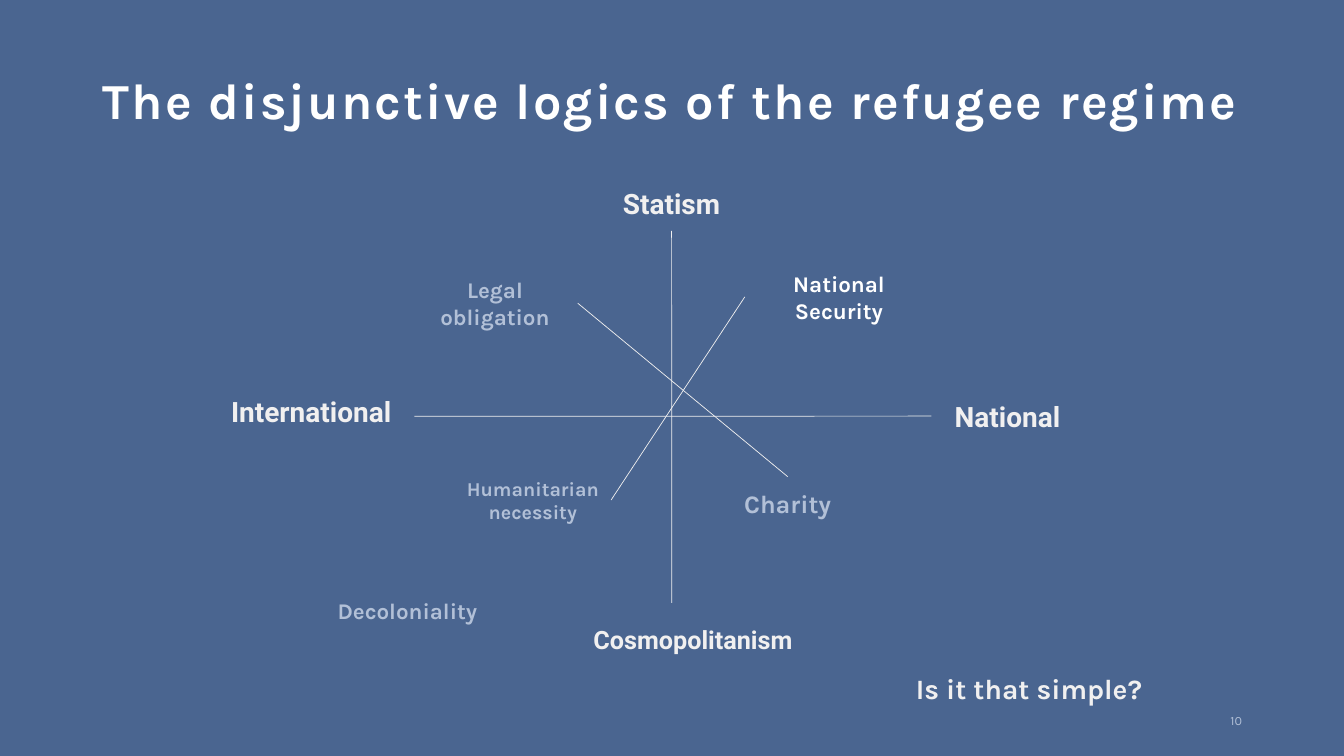
from dataclasses import dataclass

from lxml import etree
from pptx import Presentation
from pptx import util as u
from pptx.dml import color
from pptx.enum import shapes, text
from pptx.oxml import ns

TOP, LEFT, BOTTOM, RIGHT = range(4)


@dataclass(frozen=True)
class Theme:
    background: str = "4A6590"
    white: str = "FFFFFF"
    light: str = "F1F0F0"
    muted: str = "B2C0D7"
    body_font: str = "Karla"
    axis_font: str = "Roboto"
    title_size: int = 36
    large: int = 20
    medium: int = 18
    normal: int = 16
    small: int = 14
    number_size: int = 9
    line_width: float = 0.5


THEME = Theme()

LABELS = [
    ("Statism", (14.55, 4.45, 4.75, 1.37), THEME.axis_font, THEME.large, THEME.light),
    ("Legal obligation", (10.39, 6.6, 4.17, 2.08), THEME.body_font, THEME.normal, THEME.muted),
    ("National Security", (18.77, 6.02, 4.75, 2.92), THEME.body_font, THEME.normal, THEME.white),
    ("International", (5.23, 9.53, 5.23, 1.65), THEME.axis_font, THEME.large, THEME.light),
    ("National", (23.47, 9.8, 3.84, 1.37), THEME.axis_font, THEME.large, THEME.light),
    ("Humanitarian necessity", (11.46, 11.71, 3.94, 1.78), THEME.body_font, THEME.small, THEME.muted),
    ("Decoloniality", (8.1, 14.71, 4.34, 1.37), THEME.body_font, THEME.normal, THEME.muted),
    ("Charity", (18.21, 12.01, 3.28, 1.37), THEME.body_font, THEME.medium, THEME.muted),
    ("Cosmopolitanism", (14.38, 15.14, 6.17, 1.93), THEME.axis_font, THEME.medium, THEME.light),
    ("Is it that simple?", (21.82, 16.51, 8.23, 1.65), THEME.body_font, THEME.large, THEME.light),
]

AXES = [
    ((10.44, 10.49), "National", LEFT),
    ((16.93, 15.19), "Statism", BOTTOM),
]

DIAGONALS = [
    ("Humanitarian necessity", RIGHT, "National Security", LEFT),
    ("Legal obligation", RIGHT, "Charity", TOP),
]


def apply_format(target, values):
    for name, value in values.items():
        setattr(target, name, value)


def add_text(slide, wording, box, font, size, ink, bold=True, spacing=None, **paragraph_format):
    shape = slide.shapes.add_textbox(*map(u.Cm, box))
    frame = shape.text_frame
    apply_format(frame, {"word_wrap": True, "vertical_anchor": text.MSO_ANCHOR.MIDDLE})
    paragraph = frame.paragraphs[0]
    apply_format(paragraph, paragraph_format)
    run = paragraph.add_run()
    run.text = wording
    apply_format(run.font, {"name": font, "size": u.Pt(size), "bold": bold})
    run.font.color.rgb = color.RGBColor.from_string(ink)
    if spacing:
        run.font._element.set("spc", str(spacing))
    return shape


def add_label(slide, wording, box, font, size, ink):
    return add_text(slide, wording, box, font, size, ink,
                    alignment=text.PP_ALIGN.CENTER, space_before=u.Pt(10))


def add_line(slide, start, end_shape, end_side):
    x, y = map(u.Cm, start)
    connector = slide.shapes.add_connector(shapes.MSO_CONNECTOR.STRAIGHT, x, y, x, y)
    connector.end_connect(end_shape, end_side)
    connector.line.width = u.Pt(THEME.line_width)
    connector.line.color.rgb = color.RGBColor.from_string(THEME.light)
    etree.SubElement(connector._element.spPr, ns.qn("a:effectLst"))
    return connector


def main():
    presentation = Presentation()
    apply_format(presentation, {"slide_width": u.Cm(33.87), "slide_height": u.Cm(19.05)})
    slide = presentation.slides.add_slide(presentation.slide_layouts[6])
    fill = slide.background.fill
    fill.solid()
    fill.fore_color.rgb = color.RGBColor.from_string(THEME.background)

    add_text(slide, "The disjunctive logics of the refugee regime", (2.34, 1.02, 29.21, 3.15),
             THEME.body_font, THEME.title_size, THEME.white, spacing=150, line_spacing=0.9)
    labels = {label[0]: add_label(slide, *label) for label in LABELS}
    add_text(slide, "10", (23.93, 17.65, 7.62, 1.02), THEME.body_font, THEME.number_size,
             THEME.muted, bold=False, alignment=text.PP_ALIGN.RIGHT)

    for start, name, side in AXES:
        add_line(slide, start, labels[name], side)
    for start_name, start_side, end_name, end_side in DIAGONALS:
        connector = add_line(slide, (0, 0), labels[end_name], end_side)
        connector.begin_connect(labels[start_name], start_side)

    presentation.save("out.pptx")


if __name__ == "__main__":
    main()
